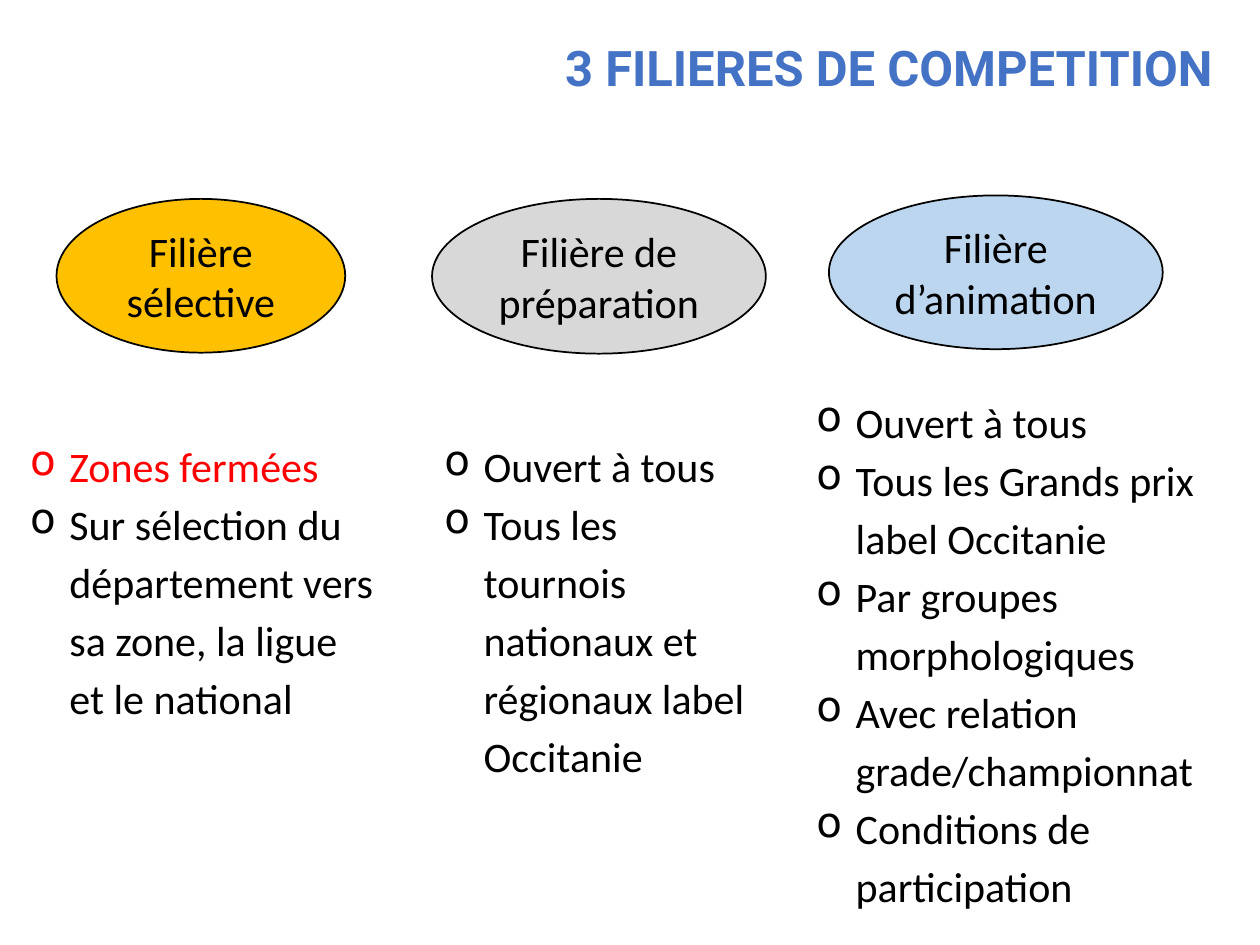
from lxml import etree
from pptx import Presentation
from pptx import util as u
from pptx.dml.color import RGBColor
from pptx.enum import shapes, text
from pptx.oxml import ns

BLACK = RGBColor(0x00, 0x00, 0x00)
RED = RGBColor(0xFF, 0x00, 0x00)
BLUE = RGBColor(0x44, 0x72, 0xC4)
GOLD = RGBColor(0xFF, 0xC0, 0x00)
GREY = RGBColor(0xD8, 0xD8, 0xD8)
SKY = RGBColor(0xBB, 0xD6, 0xEE)

# name, fill, ellipse place, list place, list items with their colours
TRACKS = [
    ("Filière sélective", GOLD, (1.14, 4.01, 5.82, 3.1), (0.36, 8.61, 7.42, 7.26), [
        ("Zones fermées", RED),
        ("Sur sélection du département vers sa zone, la ligue et le national", BLACK),
    ]),
    ("Filière de préparation", GREY, (8.71, 4.01, 6.73, 3.12), (8.71, 8.61, 6.93, 8.46), [
        ("Ouvert à tous", BLACK),
        ("Tous les tournois nationaux et régionaux label Occitanie", BLACK),
    ]),
    ("Filière d’animation", SKY, (16.71, 3.94, 6.73, 3.1), (16.21, 7.72, 9.88, 10.8), [
        ("Ouvert à tous", BLACK),
        ("Tous les Grands prix label Occitanie", BLACK),
        ("Par groupes morphologiques", BLACK),
        ("Avec relation grade/championnat", BLACK),
        ("Conditions de participation", BLACK),
    ]),
]


class TrackPage:
    body_font = "Calibri"
    title_font = "Roboto"
    body_size = u.Pt(24)
    title_size = u.Pt(28)
    indent = u.Cm(0.79)
    line_spacing = 1.15

    def __init__(self, deck):
        self.page = deck.slides.add_slide(deck.slide_layouts[6])

    def span(self, para, words, color=BLACK, font=body_font, size=body_size, bold=False):
        span = para.add_run()
        span.text = words
        span.font.name = font
        span.font.size = size
        span.font.bold = bold
        span.font.color.rgb = color

    def box(self, place):
        box = self.page.shapes.add_textbox(*map(u.Cm, place))
        box.text_frame.word_wrap = True
        return box.text_frame

    def title(self, words, place):
        para = self.box(place).paragraphs[0]
        para.alignment = text.PP_ALIGN.RIGHT
        self.span(para, words, BLUE, self.title_font, self.title_size, True)

    def ellipse(self, words, fill, place):
        oval = self.page.shapes.add_shape(shapes.MSO_SHAPE.OVAL, *map(u.Cm, place))
        oval.shadow.inherit = False
        oval.fill.solid()
        oval.fill.fore_color.rgb = fill
        oval.line.color.rgb = BLACK
        oval.line.width = u.Pt(1)
        oval.text_frame.word_wrap = True
        oval.text_frame.vertical_anchor = text.MSO_ANCHOR.MIDDLE
        para = oval.text_frame.paragraphs[0]
        para.alignment = text.PP_ALIGN.CENTER
        self.span(para, words)

    def bullet(self, para, color):
        """Give the paragraph a hanging "o" bullet in the given colour."""
        props = para._p.get_or_add_pPr()
        props.set("marL", str(self.indent))
        props.set("indent", str(-self.indent))
        tint = etree.SubElement(props, ns.qn("a:buClr"))
        etree.SubElement(tint, ns.qn("a:srgbClr"), val=str(color))
        etree.SubElement(props, ns.qn("a:buChar"), char="o")

    def bullet_list(self, items, place):
        frame = self.box(place)
        for index, (words, color) in enumerate(items):
            para = frame.add_paragraph() if index else frame.paragraphs[0]
            self.bullet(para, color)
            para.line_spacing = self.line_spacing
            self.span(para, words, color)


def main():
    deck = Presentation()
    deck.slide_width, deck.slide_height = u.Cm(25.4), u.Cm(19.05)
    page = TrackPage(deck)
    for name, fill, oval_place, list_place, items in TRACKS:
        page.ellipse(name, fill, oval_place)
        page.bullet_list(items, list_place)
    page.title("3 FILIERES DE COMPETITION", (10.52, 0.64, 14.17, 1.45))
    deck.save("out.pptx")


if __name__ == "__main__":
    main()
